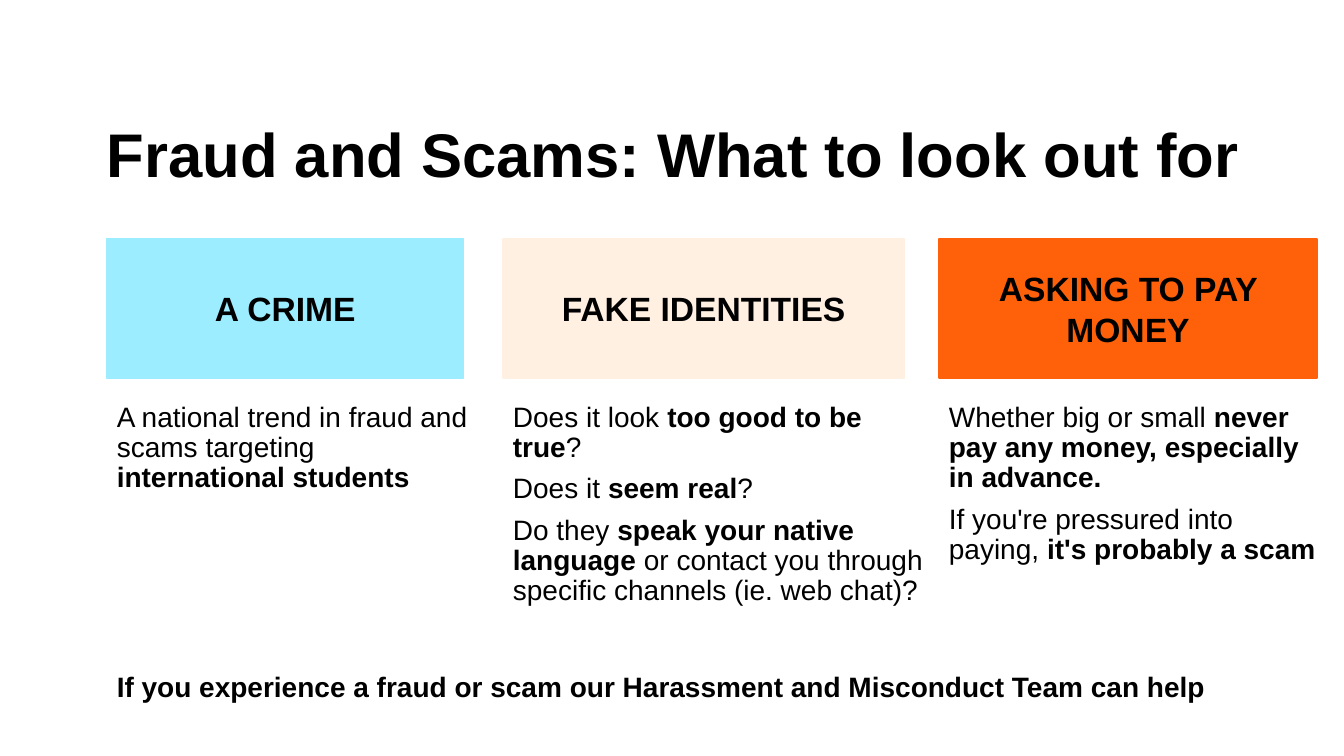
import pptx
import pptx.dml.color
import pptx.enum.shapes
import pptx.enum.text
import pptx.util

Pt = pptx.util.Pt
ALIGN = pptx.enum.text.PP_ALIGN
ANCHOR = pptx.enum.text.MSO_ANCHOR
FIT = pptx.enum.text.MSO_AUTO_SIZE

COLORS = {"text": "000000", "crime": "9CEDFF", "identities": "FFF0E2", "money": "FF610A"}

LEFT = 76.3
HEADER_TOP, HEADER_HEIGHT = 170.6, 99.4
BODY_TOP = 284.4

# Each paragraph is a list of spans: (text, bold)
COLUMNS = [
    {
        "heading": "A CRIME", "color": "crime", "left": LEFT,
        "header_width": 254.9, "body_width": 267.8, "body_height": 72.7,
        "paragraphs": [
            [("A national trend in fraud and scams targeting ", False),
             ("international students", True)],
        ],
    },
    {
        "heading": "FAKE IDENTITIES", "color": "identities", "left": 359.3,
        "header_width": 286.6, "body_width": 311.8, "body_height": 154,
        "paragraphs": [
            [("Does it look ", False), ("too good to be true", True), ("?", False)],
            [("Does it ", False), ("seem real", True), ("?", False)],
            [("Do they ", False), ("speak your native language ", True),
             ("or contact you through specific channels (ie. web chat)?", False)],
        ],
    },
    {
        "heading": "ASKING TO PAY MONEY", "color": "money", "left": 670.7,
        "header_width": 270, "body_width": 280.8, "body_height": 154,
        "paragraphs": [
            [("Whether big or small ", False),
             ("never pay any money, especially in advance.", True)],
            [("If you're pressured into paying, ", False), ("it's probably a scam", True)],
        ],
    },
]


def set_values(target, values):
    """Set every attribute of target named in values."""
    for name, value in values.items():
        setattr(target, name, value)


def rgb(name):
    return pptx.dml.color.RGBColor.from_string(COLORS[name])


class SlideBuilder:
    def __init__(self, slide, font_name):
        self.slide = slide
        self.font_name = font_name

    def fill_text(self, frame, paragraphs, size, frame_format, para_format):
        set_values(frame, {"word_wrap": True, **frame_format})
        for index, spans in enumerate(paragraphs):
            para = frame.add_paragraph() if index else frame.paragraphs[0]
            set_values(para, {"space_before": Pt(0), **para_format})
            for text, bold in spans:
                span = para.add_run()
                span.text = text
                set_values(span.font, {"name": self.font_name, "size": Pt(size), "bold": bold})
                span.font.color.rgb = rgb("text")

    def title(self, text, left, top, width, height):
        title = self.slide.shapes.title
        set_values(title, {"left": Pt(left), "top": Pt(top),
                           "width": Pt(width), "height": Pt(height)})
        margins = {f"margin_{side}": 0 for side in ("left", "top", "right", "bottom")}
        self.fill_text(title.text_frame, [[(text, True)]], 44,
                       {"auto_size": FIT.NONE, "vertical_anchor": ANCHOR.TOP, **margins},
                       {"alignment": ALIGN.LEFT, "line_spacing": 0.9})

    def header(self, text, color, left, top, width, height):
        box = self.slide.shapes.add_shape(
            pptx.enum.shapes.MSO_SHAPE.RECTANGLE, Pt(left), Pt(top), Pt(width), Pt(height))
        box.shadow.inherit = False
        box.fill.solid()
        box.fill.fore_color.rgb = rgb(color)
        box.line.color.rgb = rgb(color)
        box.line.width = Pt(1)
        self.fill_text(box.text_frame, [[(text, True)]], 24,
                       {"vertical_anchor": ANCHOR.MIDDLE}, {"alignment": ALIGN.CENTER})

    def text(self, paragraphs, left, top, width, height, para_format):
        box = self.slide.shapes.add_textbox(Pt(left), Pt(top), Pt(width), Pt(height))
        self.fill_text(box.text_frame, paragraphs, 20,
                       {"auto_size": FIT.SHAPE_TO_FIT_TEXT}, para_format)


def main():
    deck = pptx.Presentation()
    set_values(deck, {"slide_width": Pt(960), "slide_height": Pt(540)})
    title_only = deck.slide_layouts[5]
    page = SlideBuilder(deck.slides.add_slide(title_only), "Arial")

    page.title("Fraud and Scams: What to look out for", LEFT, 88.6, 839.5, 104.4)
    for column in COLUMNS:
        page.header(column["heading"], column["color"], column["left"],
                    HEADER_TOP, column["header_width"], HEADER_HEIGHT)
        page.text(column["paragraphs"], column["left"], BODY_TOP,
                  column["body_width"], column["body_height"],
                  {"line_spacing": 0.9, "space_after": Pt(8)})
    page.text([[("If you experience a fraud or scam our Harassment and Misconduct Team can help",
                 True)]], LEFT, 474.5, 807.8, 31.7, {})

    deck.save("out.pptx")


if __name__ == "__main__":
    main()
